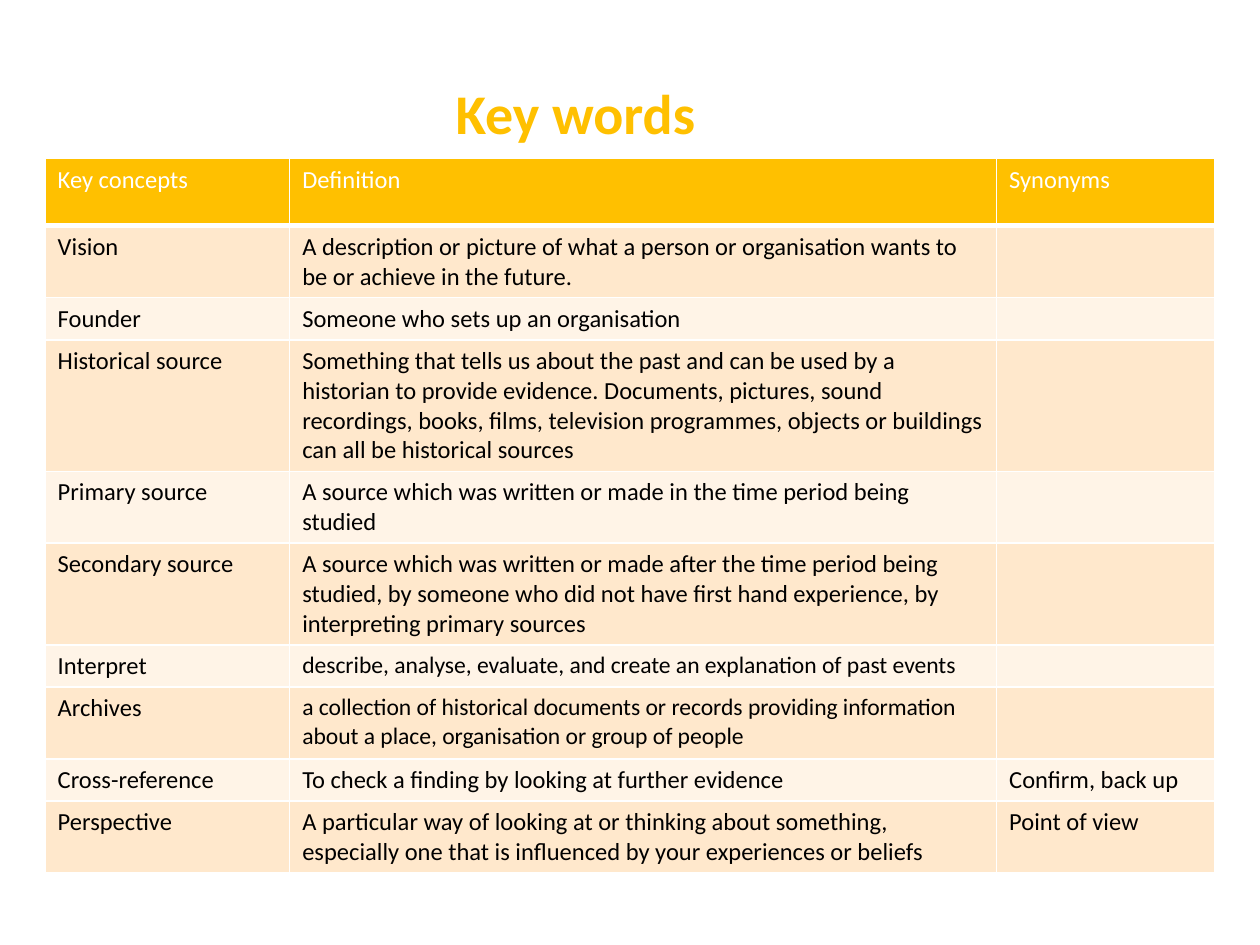
from dataclasses import dataclass
from typing import Any

from lxml import etree
from pptx import Presentation
from pptx import util as u
from pptx.dml import color
from pptx.enum import text
from pptx.oxml import ns

COLUMN_WIDTHS = (4.93, 14.25, 4.39)
HEADINGS = ("Key concepts", "Definition", "Synonyms")
KEY_WORDS = (
    ("Vision", "A description or picture of what a person or organisation wants to be or achieve in the future.", "", 2, 14),
    ("Founder", "Someone who sets up an organisation", "", 1, 14),
    ("Historical source", "Something that tells us about the past and can be used by a historian to provide evidence. "
     "Documents, pictures, sound recordings, books, films, television programmes, objects or buildings "
     "can all be historical sources", "", 4, 14),
    ("Primary source", "A source which was written or made in the time period being studied", "", 2, 14),
    ("Secondary source", "A source which was written or made after the time period being studied, by someone who "
     "did not have first hand experience, by interpreting primary sources", "", 3, 14),
    ("Interpret", "describe, analyse, evaluate, and create an explanation of past events", "", 1, 13.5),
    ("Archives", "a collection of historical documents or records providing information about a place, "
     "organisation or group of people", "", 2, 13.5),
    ("Cross-reference", "To check a finding by looking at further evidence", "Confirm, back up", 1, 14),
    ("Perspective", "A particular way of looking at or thinking about something, especially one that is "
     "influenced by your experiences or beliefs", "Point of view", 2, 14),
)


def rgb(value):
    return color.RGBColor.from_string(value)


@dataclass
class KeyWordsSlide:
    """Holds the style and the current slide, and adds its elements."""

    slide: Any
    font: str = "Calibri"
    accent: str = "FFC000"
    white: str = "FFFFFF"
    black: str = "000000"
    bands: tuple = ("FFE8CC", "FFF4E7")
    text_size: float = 14
    header_height: float = 1.35
    line_height: float = 0.6
    row_padding: float = 0.25

    def add_run(self, paragraph, words, size, ink, bold=False):
        run = paragraph.add_run()
        run.text = words
        run.font.name = self.font
        run.font.size = u.Pt(size)
        run.font.bold = bold
        run.font.color.rgb = rgb(ink)

    def add_title(self, words, left, top, width, height):
        shape = self.slide.shapes.add_textbox(u.Cm(left), u.Cm(top), u.Cm(width), u.Cm(height))
        frame = shape.text_frame
        frame.word_wrap = True
        frame.vertical_anchor = text.MSO_ANCHOR.MIDDLE
        frame.margin_right = u.Cm(0.76)
        paragraph = frame.paragraphs[0]
        paragraph.alignment = text.PP_ALIGN.CENTER
        paragraph.line_spacing = 0.9
        self.add_run(paragraph, words, 32, self.accent, bold=True)

    def add_borders(self, cell, bottom):
        properties = cell._tc.get_or_add_tcPr()
        for side, points in (("L", 1), ("R", 1), ("T", 1), ("B", bottom)):
            line = etree.SubElement(properties, ns.qn(f"a:ln{side}"), w=str(u.Pt(points)))
            fill = etree.SubElement(line, ns.qn("a:solidFill"))
            etree.SubElement(fill, ns.qn("a:srgbClr"), val=self.white)

    def fill_cell(self, cell, words, size, ink, background, bottom=1):
        self.add_borders(cell, bottom)
        cell.fill.solid()
        cell.fill.fore_color.rgb = rgb(background)
        paragraph = cell.text_frame.paragraphs[0]
        if words:
            self.add_run(paragraph, words, size, ink)
        else:
            etree.SubElement(paragraph._p, ns.qn("a:endParaRPr"), sz=str(int(size * 100)))

    def add_table(self, headings, entries, widths, left, top):
        heights = [self.header_height]
        heights += [self.line_height * lines + self.row_padding for *_, lines, _ in entries]
        shape = self.slide.shapes.add_table(
            len(heights), len(widths), u.Cm(left), u.Cm(top), u.Cm(sum(widths)), u.Cm(sum(heights)))
        table = shape.table
        for column, width in zip(table.columns, widths):
            column.width = u.Cm(width)
        for row, height in zip(table.rows, heights):
            row.height = u.Cm(height)
        for cell, heading in zip(table.rows[0].cells, headings):
            self.fill_cell(cell, heading, self.text_size, self.white, self.accent, bottom=3)
        for index, (concept, definition, synonym, _, size) in enumerate(entries):
            columns = ((concept, self.text_size), (definition, size), (synonym, self.text_size))
            for cell, (words, points) in zip(table.rows[index + 1].cells, columns):
                self.fill_cell(cell, words, points, self.black, self.bands[index % 2])


def main():
    presentation = Presentation()
    presentation.slide_width = u.Cm(25.4)
    presentation.slide_height = u.Cm(19.05)
    page = KeyWordsSlide(presentation.slides.add_slide(presentation.slide_layouts[6]))
    page.add_title("Key words", 0.91, 0.51, 21.89, 3.68)
    page.add_table(HEADINGS, KEY_WORDS, COLUMN_WIDTHS, 0.91, 3.2)
    presentation.save("out.pptx")


if __name__ == "__main__":
    main()
